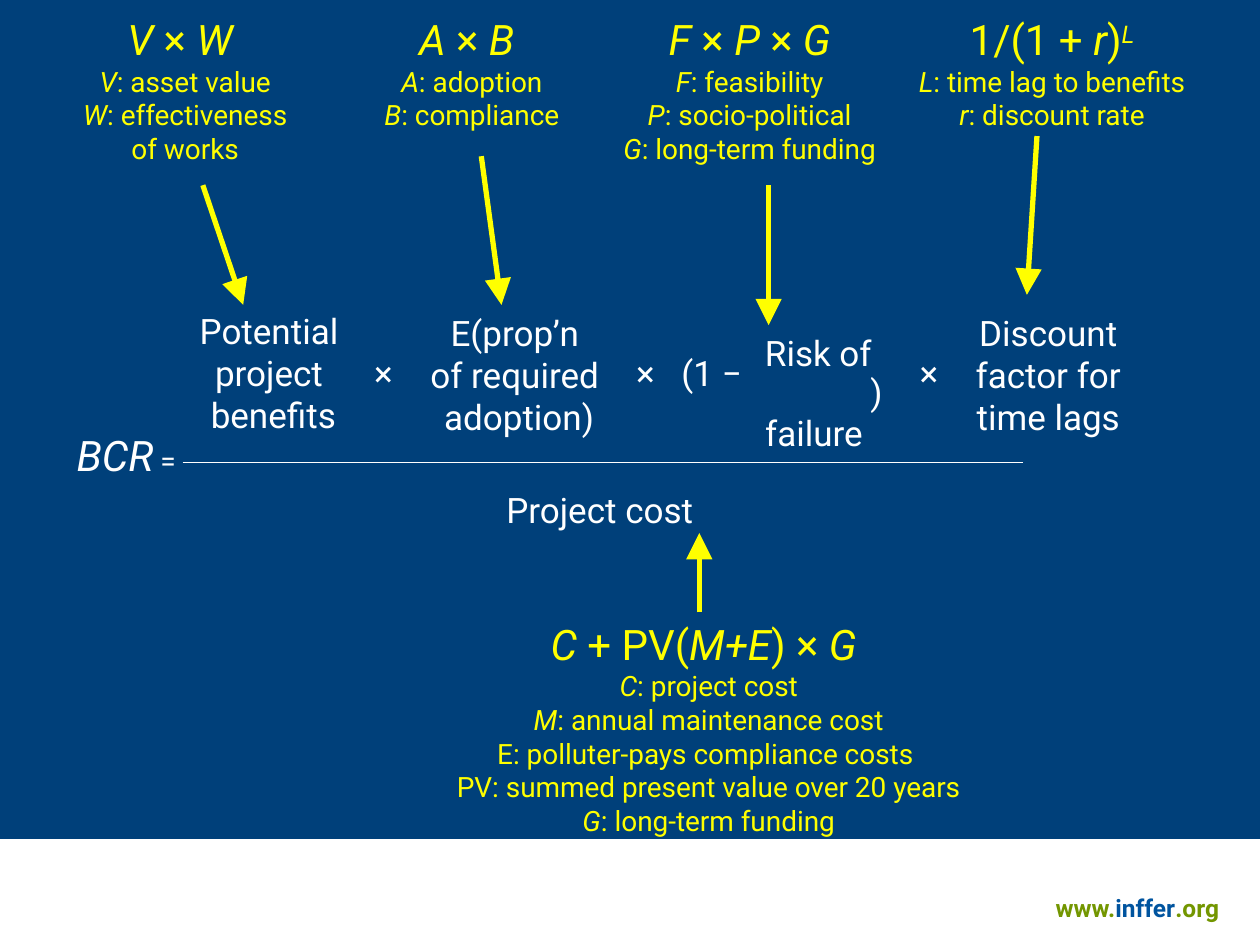
from lxml import etree
from pptx import Presentation
from pptx.dml.color import RGBColor
from pptx.enum.shapes import MSO_CONNECTOR, MSO_SHAPE
from pptx.enum.text import MSO_AUTO_SIZE, PP_ALIGN
from pptx.oxml.ns import qn
from pptx.util import Inches, Pt

STRAIGHT, RECTANGLE = MSO_CONNECTOR.STRAIGHT, MSO_SHAPE.RECTANGLE
LEFT, CENTER = PP_ALIGN.LEFT, PP_ALIGN.CENTER
GROW = MSO_AUTO_SIZE.SHAPE_TO_FIT_TEXT
FONT = "Roboto"
BLUE, WHITE, YELLOW = "00407A", "FFFFFF", "FFFF00"
GREEN, LINK_BLUE = "739600", "00549F"
WIDTH, HEIGHT = 10, 7.5
FOOTER_TOP = 6.66
FORMULA_SIZE, NOTE_SIZE, TERM_SIZE = 24, 16, 20

# Asterisks switch italics on and off; a caret starts a superscript.
# Each formula: paragraphs, box (left, top, width, height), arrow from, arrow to
FORMULAS = [
    (["*V *× *W *", "*V*: asset value", "*W*: effectiveness\vof works"],
     (0.54, 0.06, 1.86, 1.3), (1.61, 1.47), (1.93, 2.42)),
    (["*A *× *B *", "*A*: adoption", "*B*: compliance"],
     (2.94, 0.06, 1.61, 1.03), (3.82, 1.24), (3.98, 2.42)),
    (["*F *× *P *×* G*", "*F*: feasibility", "*P*: socio-political",
      "*G*: long-term funding"],
     (4.8, 0.06, 2.3, 1.3), (6.1, 1.47), (6.1, 2.58)),
    (["1/(1 + *r*)*^L*", "*L*: time lag to benefits", "*r*: discount rate"],
     (7.13, 0.06, 2.44, 1.03), (8.23, 1.08), (8.15, 2.34)),
    (["*C *+ PV(*M+E*) ×* G *", "*C*: project cost",
      "*M*: annual maintenance cost", "E: polluter-pays compliance costs ",
      "PV: summed present value over 20 years", "*G*: long-term funding"],
     (3.5, 4.86, 4.25, 1.84), (5.55, 4.86), (5.55, 4.23)),
]

# Terms of the fraction: text, box
TERMS = [
    ("Potential \vproject \vbenefits", (1.46, 2.41, 1.42, 1.1)),
    ("×", (2.87, 2.74, 0.35, 0.43)),
    ("E(prop’n \vof required \vadoption)", (3.28, 2.42, 1.68, 1.1)),
    ("×", (4.95, 2.74, 0.35, 0.43)),
    ("(1 −", (5.31, 2.74, 0.7, 0.43)),
    ("Risk of \vfailure ", (5.94, 2.58, 1.11, 0.77)),
    (")", (6.81, 2.89, 0.3, 0.43)),
    ("×", (7.2, 2.74, 0.35, 0.43)),
    ("Discount\vfactor for\vtime lags", (7.62, 2.42, 1.4, 1.1)),
    ("Project cost", (3.92, 3.83, 1.7, 0.43)),
]
RESULT = [("BCR", 24, True), (" =", 16, False)]
RESULT_BOX = (0.51, 3.36, 1, 0.5)
FRACTION_BAR = (1.45, 3.67), (8.12, 3.67)
ADDRESS = [("www.", GREEN), ("inffer", LINK_BLUE), (".org", GREEN)]
ADDRESS_BOX = (8.28, 7.04, 1.6, 0.33)


def rgb(code):
    return RGBColor.from_string(code)


def add_box(page, place):
    box = page.shapes.add_textbox(*map(Inches, place))
    box.text_frame.word_wrap = False
    box.text_frame.auto_size = GROW
    return box.text_frame


def style(span, size, color, italic=False, bold=False):
    font = span.font
    font.name, font.size, font.italic, font.bold = FONT, Pt(size), italic, bold
    font.color.rgb = rgb(color)


def add_marked_text(para, text, size, color):
    for index, part in enumerate(text.split("*")):
        if not part:
            continue
        for position, piece in enumerate(part.split("\v")):
            if position:
                para.add_line_break()
            span = para.add_run()
            span.text = piece.lstrip("^")
            style(span, size, color, italic=index % 2 == 1)
            if piece.startswith("^"):
                span.font._element.set("baseline", "30000")


def add_line(page, start, end, color, width, arrow=False):
    line = page.shapes.add_connector(STRAIGHT, *map(Inches, start + end))
    line.line.color.rgb = rgb(color)
    line.line.width = Pt(width)
    if arrow:
        etree.SubElement(line.line._get_or_add_ln(), qn("a:tailEnd"),
                         type="triangle", w="lg", len="lg")
    etree.SubElement(line._element.spPr, qn("a:effectLst"))


def main():
    deck = Presentation()
    deck.slide_width, deck.slide_height = Inches(WIDTH), Inches(HEIGHT)
    page = deck.slides.add_slide(deck.slide_layouts[6])
    page.background.fill.solid()
    page.background.fill.fore_color.rgb = rgb(BLUE)

    # Footer band and web address
    band = page.shapes.add_shape(RECTANGLE, 0, Inches(FOOTER_TOP),
                                 Inches(WIDTH), Inches(HEIGHT - FOOTER_TOP))
    band.shadow.inherit = False
    band.fill.solid()
    band.fill.fore_color.rgb = rgb(WHITE)
    band.line.fill.background()
    para = add_box(page, ADDRESS_BOX).paragraphs[0]
    for text, color in ADDRESS:
        span = para.add_run()
        span.text = text
        style(span, 14, color, bold=True)

    # Benefit-cost ratio
    para = add_box(page, RESULT_BOX).paragraphs[0]
    for text, size, italic in RESULT:
        span = para.add_run()
        span.text = text
        style(span, size, WHITE, italic)
    add_line(page, *FRACTION_BAR, WHITE, 1)
    for text, place in TERMS:
        para = add_box(page, place).paragraphs[0]
        para.alignment = CENTER if "\v" in text else LEFT
        add_marked_text(para, text, TERM_SIZE, WHITE)

    # Formulas with arrows to their terms
    for lines, place, start, end in FORMULAS:
        frame = add_box(page, place)
        for index, text in enumerate(lines):
            para = frame.add_paragraph() if index else frame.paragraphs[0]
            para.alignment = CENTER
            add_marked_text(para, text, NOTE_SIZE if index else FORMULA_SIZE, YELLOW)
        add_line(page, start, end, YELLOW, 3, arrow=True)

    deck.save("out.pptx")


if __name__ == "__main__":
    main()
